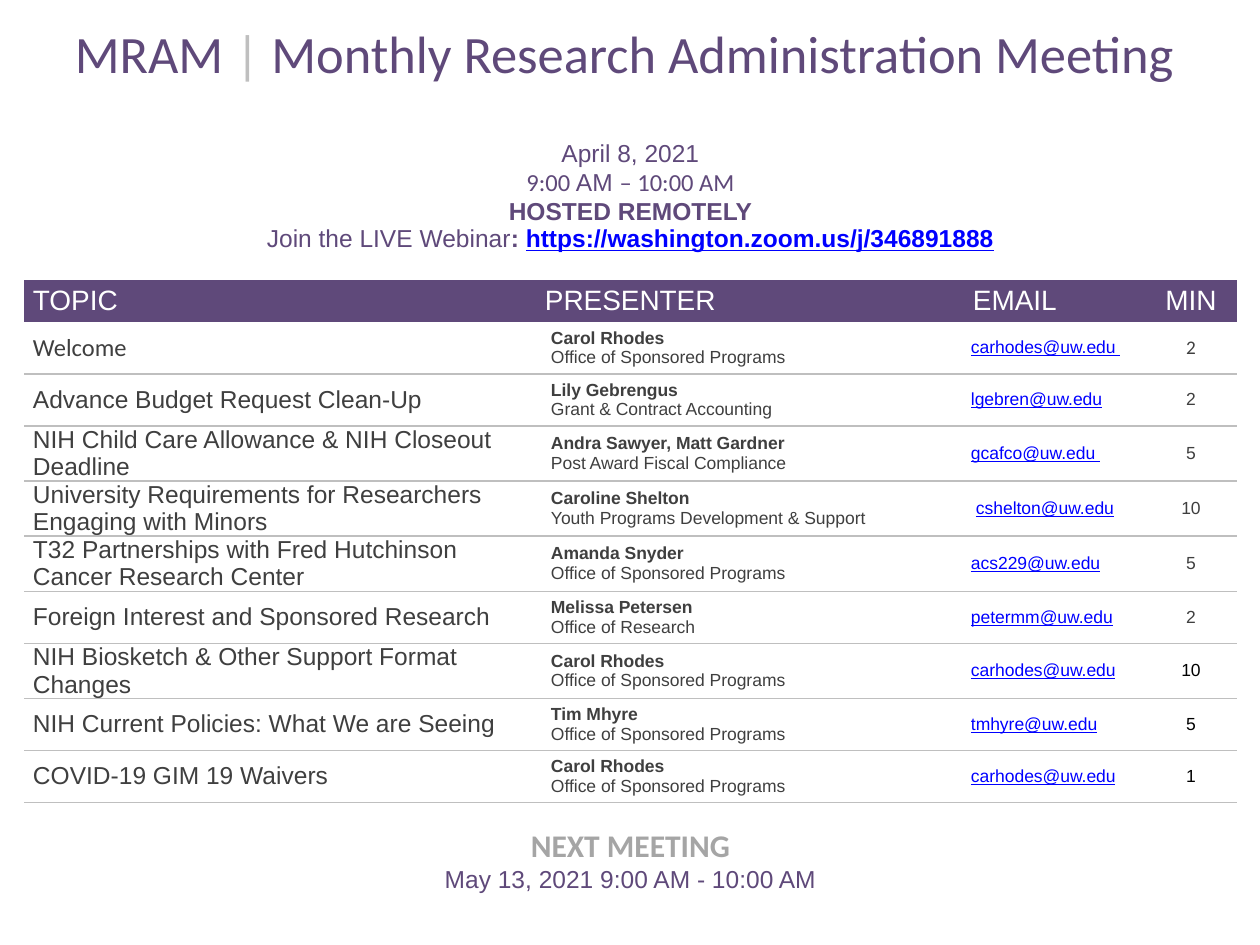
from lxml import etree
from pptx import Presentation
from pptx import util as u
from pptx.dml.color import RGBColor
from pptx.enum import text
from pptx.oxml import ns

COLORS = {
    "purple": "5F497A", "rule": "BFBFBF", "text": "3F3F3F", "link": "0000FF",
    "white": "FFFFFF", "black": "000000", "gray": "A5A5A5",
}
PLAIN_TABLE_STYLE = "{2D5ABB26-0587-4C30-8999-92F81FD0307C}"
PAD = 9
COLUMNS = [512, 420, 189, 92]
TITLE_HEIGHT, DETAILS_HEIGHT, HEADER_HEIGHT, TOPIC_HEIGHT, NEXT_HEIGHT = 78, 192, 42, 52, 93

HEADINGS = ["TOPIC", "PRESENTER", "EMAIL", "MIN"]
TOPICS = [
    ("Welcome", "Carol Rhodes", "Office of Sponsored Programs", "carhodes@uw.edu ", "2"),
    ("Advance Budget Request Clean-Up", "Lily Gebrengus", "Grant & Contract Accounting",
     "lgebren@uw.edu", "2"),
    ("NIH Child Care Allowance & NIH Closeout Deadline", "Andra Sawyer, Matt Gardner",
     "Post Award Fiscal Compliance", "gcafco@uw.edu ", "5"),
    ("University Requirements for Researchers Engaging with Minors", "Caroline Shelton",
     "Youth Programs Development & Support", "cshelton@uw.edu", "10"),
    ("T32 Partnerships with Fred Hutchinson Cancer Research Center", "Amanda Snyder",
     "Office of Sponsored Programs", "acs229@uw.edu", "5"),
    ("Foreign Interest and Sponsored Research", "Melissa Petersen", "Office of Research",
     "petermm@uw.edu", "2"),
    ("NIH Biosketch & Other Support Format Changes", "Carol Rhodes",
     "Office of Sponsored Programs", "carhodes@uw.edu", "10"),
    ("NIH Current Policies: What We are Seeing", "Tim Mhyre", "Office of Sponsored Programs",
     "tmhyre@uw.edu", "5"),
    ("COVID-19 GIM 19 Waivers", "Carol Rhodes", "Office of Sponsored Programs",
     "carhodes@uw.edu", "1"),
]
FIRST_BLACK_MINUTES = 6


def px(value):
    return u.Emu(round(value * 914400 / 126))


def rgb(name):
    return RGBColor.from_string(COLORS[name])


def words(content, size, color="text", font="Arial", bold=False, underline=False):
    """Describe one run of text."""
    return content, size, color, font, bold, underline


class AgendaSlide:
    def __init__(self, presentation):
        self.slide = presentation.slides.add_slide(presentation.slide_layouts[6])

    def add_table(self, left, top, columns, rows):
        frame = self.slide.shapes.add_table(
            len(rows), len(columns), px(left), px(top), px(sum(columns)), px(sum(rows)))
        self.table = frame.table
        self.table.first_row = self.table.horz_banding = False
        self.table._tbl.tblPr.find(ns.qn("a:tableStyleId")).text = PLAIN_TABLE_STYLE
        for column, width in zip(self.table.columns, columns):
            column.width = px(width)
        for row, height in zip(self.table.rows, rows):
            row.height = px(height)

    def fill_cell(self, row, column, paragraphs, fill="white", centered=False, left=PAD,
                  right=PAD, top=0, bottom=0, anchor=text.MSO_ANCHOR.MIDDLE, ruled=False):
        cell = self.table.cell(row, column)
        cell.margin_left, cell.margin_right = px(left), px(right)
        cell.margin_top, cell.margin_bottom = px(top), px(bottom)
        cell.vertical_anchor = anchor
        cell.fill.solid()
        cell.fill.fore_color.rgb = rgb(fill)
        if ruled:
            self.rule_below(cell)
        for index, runs in enumerate(paragraphs):
            frame = cell.text_frame
            paragraph = frame.add_paragraph() if index else frame.paragraphs[0]
            paragraph.alignment = text.PP_ALIGN.CENTER if centered else text.PP_ALIGN.LEFT
            for content, size, color, font, bold, underline in runs:
                run = paragraph.add_run()
                run.text = content
                run.font.size = u.Pt(size)
                run.font.name = font
                run.font.bold = bold
                run.font.underline = underline
                run.font.color.rgb = rgb(color)

    def fill_wide_row(self, row, paragraphs, **layout):
        """Merge a whole row into one centred cell."""
        last = len(self.table.columns) - 1
        self.table.cell(row, 0).merge(self.table.cell(row, last))
        self.fill_cell(row, 0, paragraphs, centered=True, **layout)

    def rule_below(self, cell):
        properties = cell._tc.get_or_add_tcPr()
        line = etree.Element(ns.qn("a:lnB"), w=str(u.Pt(1)))
        solid = etree.SubElement(line, ns.qn("a:solidFill"))
        etree.SubElement(solid, ns.qn("a:srgbClr"), val=COLORS["rule"])
        properties.insert(0, line)


def main():
    presentation = Presentation()
    presentation.slide_width, presentation.slide_height = u.Inches(10), u.Inches(7.5)
    agenda = AgendaSlide(presentation)
    rows = [TITLE_HEIGHT, DETAILS_HEIGHT, HEADER_HEIGHT]
    rows += [TOPIC_HEIGHT] * len(TOPICS) + [NEXT_HEIGHT]
    agenda.add_table(24, 10, COLUMNS, rows)

    agenda.fill_wide_row(0, [[
        words("MRAM ", 30, "purple", "Calibri"),
        words("|", 30, "rule", "Calibri"),
        words(" Monthly Research Administration Meeting ", 30, "purple", "Calibri"),
    ]], anchor=text.MSO_ANCHOR.BOTTOM)
    agenda.fill_wide_row(1, [
        [words("April 8, 2021", 14, "purple")],
        [words("9:00 ", 14, "purple", "Calibri"), words("AM ", 14, "purple"),
         words("– 10:00 AM", 14, "purple", "Calibri")],
        [words("HOSTED REMOTELY", 14, "purple", bold=True)],
        [words("Join the LIVE Webinar", 14, "purple"), words(": ", 14, "purple", bold=True),
         words("https://washington.zoom.us/j/346891888", 14, "link", bold=True, underline=True)],
    ], anchor=text.MSO_ANCHOR.BOTTOM, bottom=27)

    for column, heading in enumerate(HEADINGS):
        agenda.fill_cell(2, column, [[words(heading, 16, "white")]], fill="purple",
                         left=17 if heading == "EMAIL" else PAD, centered=heading == "MIN")

    for index, (topic, presenter, office, email, minutes) in enumerate(TOPICS):
        row = index + 3
        font, minutes_size = ("Arial", 10) if index else ("Calibri", 11)
        minutes_color = "text" if index < FIRST_BLACK_MINUTES else "black"
        agenda.fill_cell(row, 0, [[words(topic, 14, font=font)]], ruled=True)
        agenda.fill_cell(row, 1, [[words(presenter, 10, bold=True)], [words(office, 10)]],
                         left=15, right=15, ruled=True)
        agenda.fill_cell(row, 2, [[words(email, 10, "link", underline=True)]],
                         left=20 if email.startswith("cshelton") else 15, right=15, ruled=True)
        agenda.fill_cell(row, 3, [[words(minutes, minutes_size, minutes_color, font)]],
                         centered=True, ruled=True)

    agenda.fill_wide_row(len(rows) - 1, [
        [words("NEXT MEETING", 18, "gray", "Calibri", bold=True)],
        [words("May 13, 2021 9:00 AM - 10:00 AM", 14, "purple")],
    ], anchor=text.MSO_ANCHOR.TOP, top=25)
    presentation.save("out.pptx")


if __name__ == "__main__":
    main()
